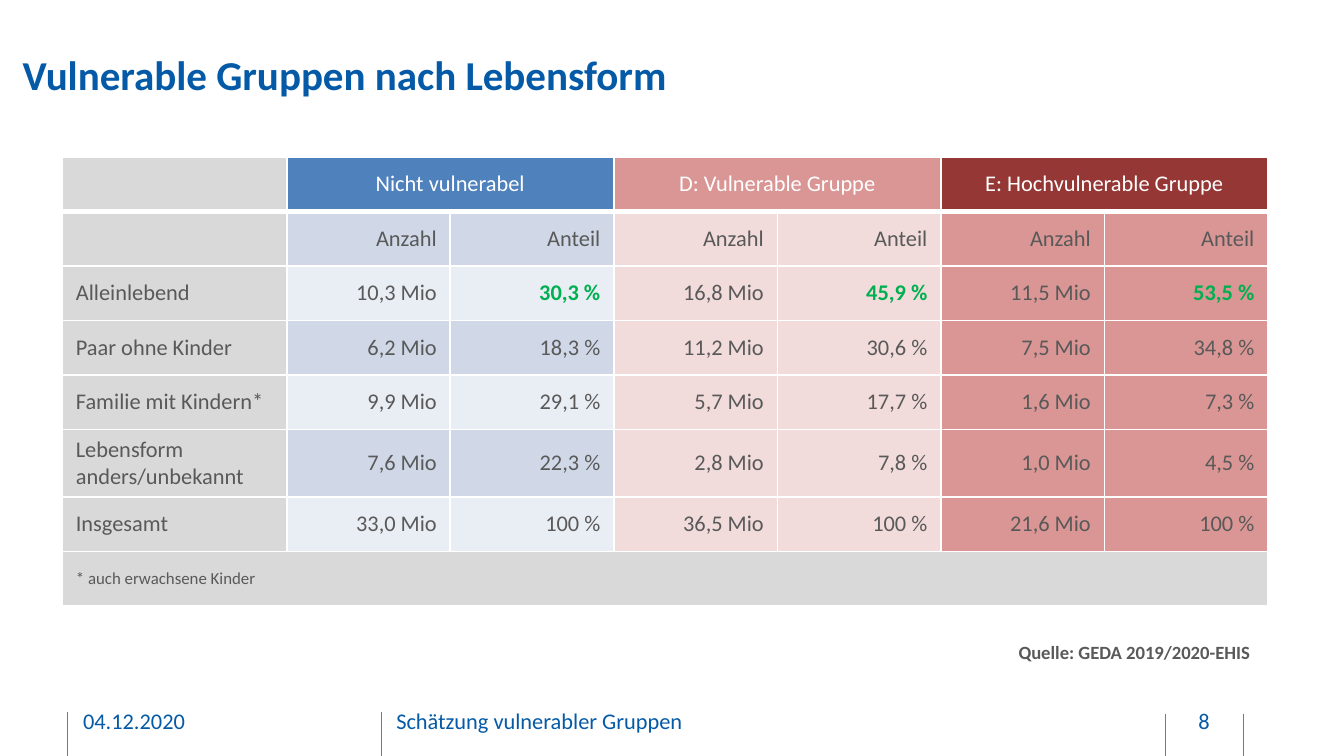
"""Build the slide on vulnerable groups by household type."""
from lxml.etree import SubElement
from pptx import Presentation
from pptx.dml.color import RGBColor
from pptx.enum.shapes import MSO_CONNECTOR
from pptx.enum.text import MSO_ANCHOR, PP_ALIGN
from pptx.oxml import parse_xml
from pptx.oxml.ns import nsdecls, qn
from pptx.util import Cm, Pt

WHITE = RGBColor(0xFF, 0xFF, 0xFF)
NAVY = RGBColor(0x04, 0x5A, 0xA6)
BLUE = RGBColor(0x4F, 0x81, 0xBD)
BLUE_MID = RGBColor(0xD0, 0xD8, 0xE8)
BLUE_PALE = RGBColor(0xE9, 0xED, 0xF4)
ROSE = RGBColor(0xD9, 0x96, 0x94)
ROSE_PALE = RGBColor(0xF2, 0xDC, 0xDB)
DARK_RED = RGBColor(0x95, 0x37, 0x35)
GREY = RGBColor(0xD9, 0xD9, 0xD9)
TEXT_GREY = RGBColor(0x59, 0x59, 0x59)
GREEN = RGBColor(0x00, 0xB0, 0x50)

GROUPS = [
    ("Nicht vulnerabel", BLUE, (BLUE_MID, BLUE_PALE)),
    ("D: Vulnerable Gruppe", ROSE, (ROSE_PALE, ROSE_PALE)),
    ("E: Hochvulnerable Gruppe", DARK_RED, (ROSE, ROSE)),
]
HOUSEHOLDS = [
    ("", *["Anzahl", "Anteil"] * 3),
    ("Alleinlebend", "10,3 Mio", "30,3 %", "16,8 Mio", "45,9 %", "11,5 Mio", "53,5 %"),
    ("Paar ohne Kinder", "6,2 Mio", "18,3 %", "11,2 Mio", "30,6 %", "7,5 Mio", "34,8 %"),
    ("Familie mit Kindern*", "9,9 Mio", "29,1 %", "5,7 Mio", "17,7 %", "1,6 Mio", "7,3 %"),
    ("Lebensform anders/unbekannt", "7,6 Mio", "22,3 %", "2,8 Mio", "7,8 %", "1,0 Mio", "4,5 %"),
    ("Insgesamt", "33,0 Mio", "100 %", "36,5 Mio", "100 %", "21,6 Mio", "100 %"),
]
HIGHLIGHTS = {"30,3 %", "45,9 %", "53,5 %"}


class SlideBuilder:
    """Hold the text style and the slide being filled."""

    def __init__(self, slide):
        self.slide = slide
        self.style = {"name": "Calibri", "size": Pt(12), "bold": False}

    def add_wording(self, frame, wording, color, align=PP_ALIGN.LEFT, **changes):
        paragraph = frame.paragraphs[0]
        paragraph.alignment = align
        run = paragraph.add_run()
        run.text = wording
        for attribute, value in (self.style | changes).items():
            setattr(run.font, attribute, value)
        run.font.color.rgb = color

    def text(self, wording, box, color, margins=(0, 0.13), align=PP_ALIGN.LEFT,
             wrap=True, **changes):
        frame = self.slide.shapes.add_textbox(*map(Cm, box)).text_frame
        side, upright = map(Cm, margins)
        layout = {
            "word_wrap": wrap, "vertical_anchor": MSO_ANCHOR.MIDDLE,
            "margin_left": side, "margin_right": side,
            "margin_top": upright, "margin_bottom": upright,
        }
        for attribute, value in layout.items():
            setattr(frame, attribute, value)
        self.add_wording(frame, wording, color, align, **changes)

    def divider(self, x, top, bottom):
        line = self.slide.shapes.add_connector(
            MSO_CONNECTOR.STRAIGHT, Cm(x), Cm(top), Cm(x), Cm(bottom))
        line.line.color.rgb = BLUE
        line.line.width = Pt(0.5)
        SubElement(line._element.spPr, qn("a:effectLst"))

    def cell(self, cell, wording, fill, color=TEXT_GREY, align=PP_ALIGN.LEFT,
             top=1, bottom=1, **changes):
        cell.fill.solid()
        cell.fill.fore_color.rgb = fill
        cell.vertical_anchor = MSO_ANCHOR.MIDDLE
        edges = {"lnL": 1, "lnR": 1, "lnT": top, "lnB": bottom}
        for position, (edge, points) in enumerate(edges.items()):
            cell._tc.tcPr.insert(position, parse_xml(
                f'<a:{edge} {nsdecls("a")} w="{Pt(points)}"><a:solidFill>'
                f'<a:srgbClr val="{WHITE}"/></a:solidFill></a:{edge}>'))
        if wording:
            self.add_wording(cell.text_frame, wording, color, align, **changes)

    def table(self, groups, households, footnote, box, label_width, value_width):
        row_count, column_count = len(households) + 2, 2 * len(groups) + 1
        table = self.slide.shapes.add_table(row_count, column_count, *map(Cm, box)).table
        for index, column in enumerate(table.columns):
            column.width = Cm(value_width if index else label_width)

        self.cell(table.cell(0, 0), "", GREY, bottom=3)
        for index, (heading, fill, _) in enumerate(groups):
            first, second = (table.cell(0, 2 * index + offset) for offset in (1, 2))
            first.merge(second)
            self.cell(first, heading, fill, WHITE, PP_ALIGN.CENTER, bottom=3)
            self.cell(second, "", fill, bottom=3)

        for row, (household, *values) in enumerate(households, 1):
            top = 3 if row == 1 else 1
            self.cell(table.cell(row, 0), household, GREY, top=top)
            for index, value in enumerate(values):
                bands = groups[index // 2][2]
                marked = value in HIGHLIGHTS
                self.cell(table.cell(row, index + 1), value, bands[(row - 1) % 2],
                          GREEN if marked else TEXT_GREY, PP_ALIGN.RIGHT,
                          top=top, bold=marked)

        last = row_count - 1
        table.cell(last, 0).merge(table.cell(last, column_count - 1))
        for column in range(column_count):
            self.cell(table.cell(last, column), "" if column else footnote, GREY, size=Pt(9))


def main():
    presentation = Presentation()
    presentation.slide_width, presentation.slide_height = Cm(25.4), Cm(14.29)
    builder = SlideBuilder(presentation.slides.add_slide(presentation.slide_layouts[6]))

    for x, top in ((1.27, 13.45), (7.21, 13.45), (22.02, 13.49), (23.5, 13.49)):
        builder.divider(x, top, 14.29)
    for wording, left, width, align in (
        ("04.12.2020", 1.57, 5.16, PP_ALIGN.LEFT),
        ("Schätzung vulnerabler Gruppen", 7.49, 8.05, PP_ALIGN.LEFT),
        ("8", 22.07, 1.37, PP_ALIGN.CENTER),
    ):
        builder.text(wording, (left, 13.24, width, 0.76), NAVY, align=align)

    builder.text("Vulnerable Gruppen nach Lebensform", (0.43, 0.41, 22.17, 1.98), NAVY,
                 margins=(0, 0), size=Pt(22), bold=True)
    builder.table(GROUPS, HOUSEHOLDS, "* auch erwachsene Kinder",
                  (1.18, 2.97, 22.78, 8.24), label_width=4.24, value_width=3.09)
    builder.text("Quelle: GEDA 2019/2020-EHIS", (19, 11.99, 4.95, 0.68), TEXT_GREY,
                 margins=(0.25, 0.13), wrap=False, size=Pt(10), bold=True)
    presentation.save("out.pptx")


if __name__ == "__main__":
    main()
